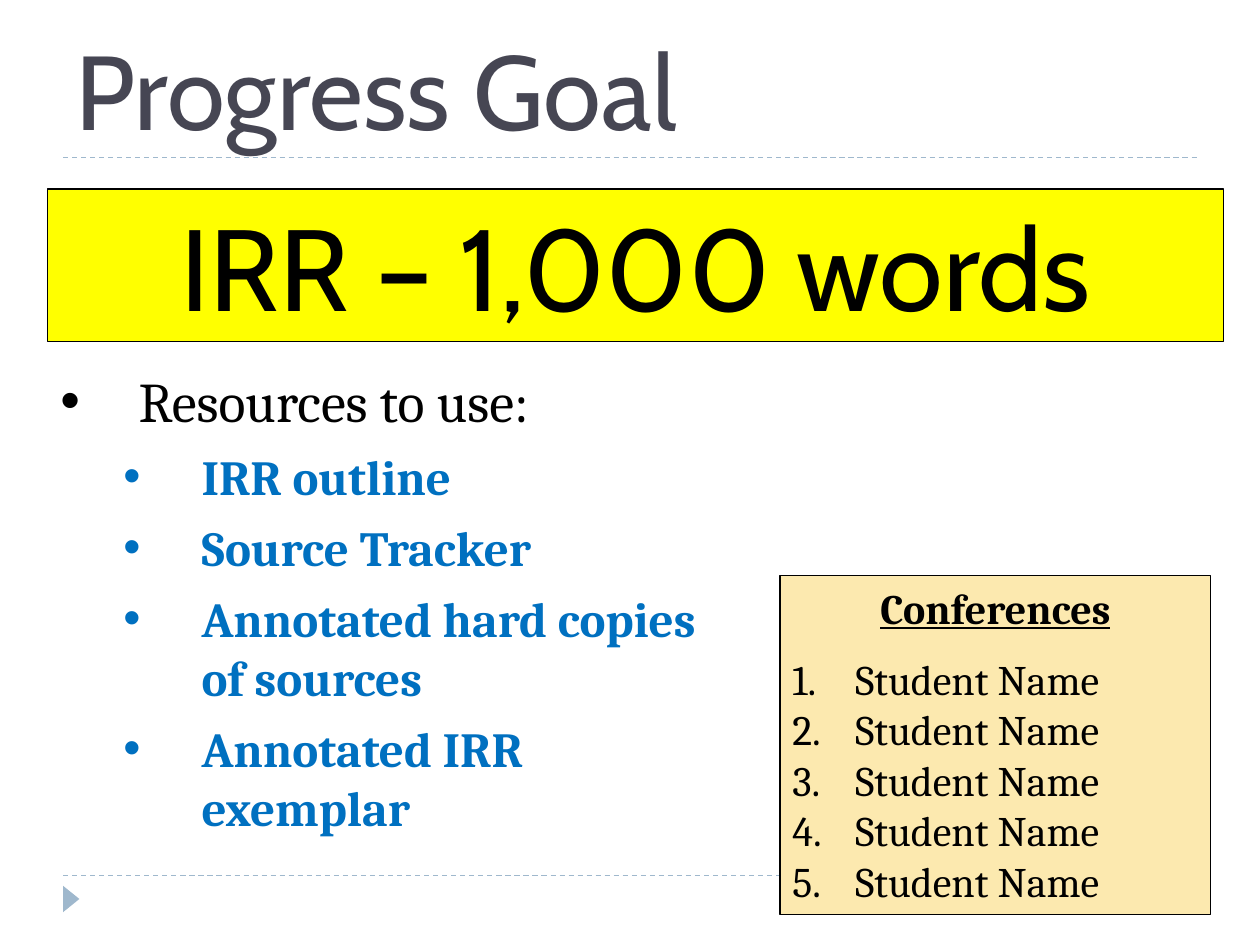
from lxml import etree
from pptx import Presentation, util as u
from pptx.dml.color import RGBColor
from pptx.enum import dml, shapes, text
from pptx.oxml.ns import qn

SLATE, BLUE, BLACK = "9FB8CD", "0070C0", "000000"


def tint(code):
    """Turn a hex string into a colour."""
    return RGBColor.from_string(code)


def place(item, left, top, width, height):
    """Move and size an item, in inches."""
    item.left, item.top = u.Inches(left), u.Inches(top)
    item.width, item.height = u.Inches(width), u.Inches(height)


def style(para, size, face="Cambria", color=BLACK, bold=False):
    """Set the font of a paragraph."""
    font = para.font
    font.size, font.name, font.bold = u.Pt(size), face, bold
    font.color.rgb = tint(color)


def mark(para, left, hang, tag, **attrs):
    """Give a paragraph a hanging bullet or number."""
    props = para._p.get_or_add_pPr()
    props.set("marL", str(u.Inches(left)))
    props.set("indent", str(-u.Inches(hang)))
    etree.SubElement(props, qn("a:buFont")).set("typeface", "Arial" if tag == "a:buChar" else "+mj-lt")
    etree.SubElement(props, qn(tag), attrs)


def write(frame, lines):
    """Fill a frame with lines and yield its paragraphs."""
    for i, line in enumerate(lines):
        para = frame.add_paragraph() if i else frame.paragraphs[0]
        para.text = line
        yield para


def rule(slide, top):
    """Draw a dashed rule across the slide."""
    ends = [u.Inches(n) for n in (0.5, top, 9.5, top)]
    line = slide.shapes.add_connector(shapes.MSO_CONNECTOR.STRAIGHT, *ends)
    line.line.color.rgb = tint(SLATE)
    line.line.width = u.Pt(0.75)
    line.line.dash_style = dml.MSO_LINE.DASH
    etree.SubElement(line._element.spPr, qn("a:effectLst"))


def shape(slide, kind, box, fill, edge=None):
    """Add a flat filled shape and return it."""
    item = slide.shapes.add_shape(kind, *(u.Inches(n) for n in box))
    item.shadow.inherit = False
    item.fill.solid()
    item.fill.fore_color.rgb = tint(fill)
    if edge:
        item.line.color.rgb = tint(edge)
        item.line.width = u.Pt(0.75)
    else:
        item.line.fill.background()
    return item


def title(slide, words):
    """Fill the title placeholder."""
    head = slide.shapes.title
    place(head, 0.5, 0.25, 9, 1)
    frame = head.text_frame
    frame.text = words
    frame.auto_size = text.MSO_AUTO_SIZE.NONE
    frame.vertical_anchor = text.MSO_ANCHOR.BOTTOM
    para = frame.paragraphs[0]
    para.alignment = text.PP_ALIGN.LEFT
    style(para, 60, "Cabin", "464653")


def banner(slide, words):
    """Add the goal banner."""
    box = shape(slide, shapes.MSO_SHAPE.RECTANGLE, (0.38, 1.5, 9.33, 1.21), "FFFF00", BLACK)
    box.text_frame.text = words
    para = box.text_frame.paragraphs[0]
    para.alignment = text.PP_ALIGN.CENTER
    style(para, 66, "Cabin")


def sources(slide, lead, items):
    """Fill the body placeholder with a lead line and its items."""
    body = slide.placeholders[1]
    place(body, 0.38, 2.86, 5.38, 3.89)
    body.text_frame.auto_size = text.MSO_AUTO_SIZE.NONE
    for i, para in enumerate(write(body.text_frame, [lead, *items])):
        para.level = min(i, 1)
        para.space_before = u.Pt(7 if i else 0)
        mark(para, 1.12 if i else 0.62, 0.62, "a:buChar", char="•")
        if i:
            style(para, 28, color=BLUE, bold=True)
        else:
            style(para, 32)


def card(slide, head, names):
    """Add the card with its heading and numbered names."""
    box = shape(slide, shapes.MSO_SHAPE.RECTANGLE, (6.19, 4.57, 3.42, 2.69), "FCE9AF", BLACK)
    frame = box.text_frame
    frame.vertical_anchor = text.MSO_ANCHOR.TOP
    for i, para in enumerate(write(frame, [head, *names])):
        para.alignment = text.PP_ALIGN.LEFT if i else text.PP_ALIGN.CENTER
        if i:
            mark(para, 0.5, 0.5, "a:buAutoNum", type="arabicPeriod")
        else:
            para.space_after = u.Pt(12)
        style(para, 24, bold=not i)
        para.font.underline = not i


def main():
    """Build and save the slide."""
    deck = Presentation()
    deck.slide_width, deck.slide_height = u.Inches(10), u.Inches(7.5)
    slide = deck.slides.add_slide(deck.slide_layouts[1])
    for top in (6.95, 1.25):
        rule(slide, top)
    arrow = shape(slide, shapes.MSO_SHAPE.ISOSCELES_TRIANGLE, (0.46, 7.07, 0.21, 0.13), SLATE)
    arrow.rotation = 90
    title(slide, "Progress Goal")
    banner(slide, "IRR – 1,000 words")
    sources(slide, "Resources to use:", [
        "IRR outline",
        "Source Tracker",
        "Annotated hard copies of sources",
        "Annotated IRR exemplar",
    ])
    card(slide, "Conferences", ["Student Name"] * 5)
    deck.save("out.pptx")


if __name__ == "__main__":
    main()
